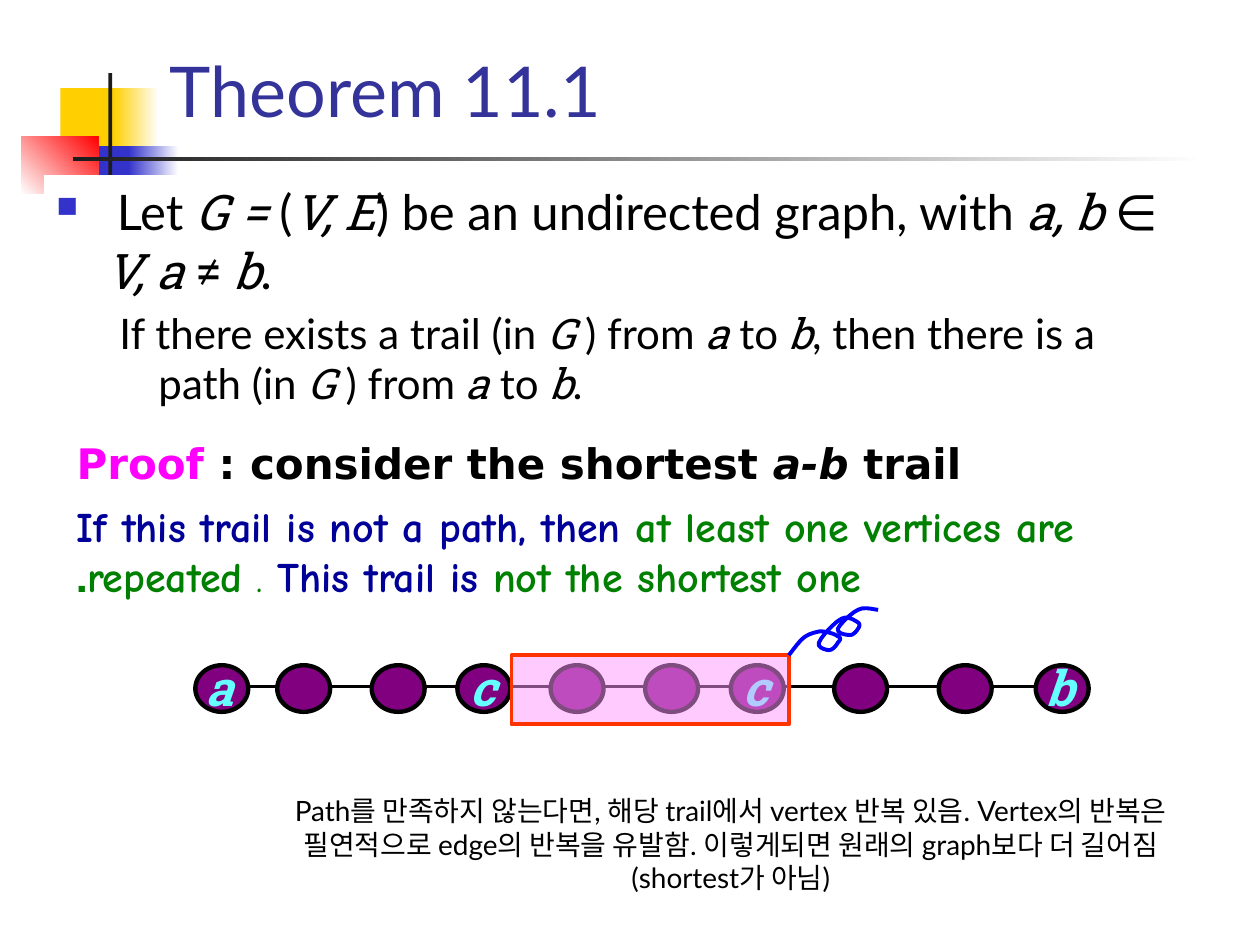
import pptx
import pptx.util
import pptx.dml.color
import pptx.enum.shapes
import pptx.enum.text
import pptx.oxml
import pptx.oxml.ns
import lxml.etree

Inches, Pt = pptx.util.Inches, pptx.util.Pt
RGBColor = pptx.dml.color.RGBColor
SHAPE = pptx.enum.shapes.MSO_SHAPE
ALIGN = pptx.enum.text.PP_ALIGN
ANCHOR = pptx.enum.text.MSO_ANCHOR
qn = pptx.oxml.ns.qn

WHITE = RGBColor(0xFF, 0xFF, 0xFF)
BLACK = RGBColor(0, 0, 0)
YELLOW = RGBColor(0xFF, 0xCF, 0x01)
BLUE = RGBColor(0x33, 0x33, 0xCC)
RED = RGBColor(0xFF, 0, 0)
CHARCOAL = RGBColor(0x1C, 0x1C, 0x1C)
TITLE_BLUE = RGBColor(0x33, 0x33, 0x99)
MAGENTA = RGBColor(0xFF, 0, 0xFF)
NAVY = RGBColor(0, 0, 0x99)
GREEN = RGBColor(0, 0x80, 0)
PURPLE = RGBColor(0x80, 0, 0x80)
CYAN = RGBColor(0x66, 0xFF, 0xFF)
PINK = RGBColor(0xFF, 0x99, 0xFF)
ORANGE = RGBColor(0xFF, 0x33, 0)
LOOP_BLUE = RGBColor(0, 0, 0xFF)

deck = pptx.Presentation()
deck.slide_width, deck.slide_height = Inches(10), Inches(7.5)
slide = deck.slides.add_slide(deck.slide_layouts[6])
shapes = slide.shapes


def draw(kind, box, fill, outline=None, width=0):
    """Add a preset shape; a fill of (start, end, angle) is a gradient."""
    shape = shapes.add_shape(kind, *map(Inches, box))
    shape.shadow.inherit = False
    if isinstance(fill, tuple) and not isinstance(fill, RGBColor):
        shape.fill.gradient()
        shape.fill.gradient_angle = fill[2]
        for stop, color in zip(shape.fill.gradient_stops, fill):
            stop.color.rgb = color
    else:
        shape.fill.solid()
        shape.fill.fore_color.rgb = fill
    if outline is None:
        shape.line.fill.background()
    else:
        shape.line.color.rgb = outline
        shape.line.width = Pt(width)
    return shape


def write(box, paragraphs, anchor=ANCHOR.TOP, wrap=True):
    """Add a text box from (paragraph formats, indents, runs) entries."""
    frame = shapes.add_textbox(*map(Inches, box)).text_frame
    frame.word_wrap, frame.vertical_anchor = wrap, anchor
    for index, (formats, properties, runs) in enumerate(paragraphs):
        paragraph = frame.add_paragraph() if index else frame.paragraphs[0]
        for name, value in formats.items():
            setattr(paragraph, name, value)
        for name, value in properties.items():
            paragraph._p.get_or_add_pPr().set(name, str(value))
        for text, font in runs:
            run = paragraph.add_run()
            run.text = text
            for name, value in font.items():
                if name == "color":
                    run.font.color.rgb = value
                else:
                    setattr(run.font, name, value)
    return frame


# Corner ornament and title rule
for box, fill in [
    ((0.48, 0.7, 0.48, 0.52), YELLOW),
    ((0.9, 0.7, 0.36, 0.52), (YELLOW, WHITE, 0)),
    ((0.62, 1.16, 0.46, 0.52), BLUE),
    ((1.02, 1.16, 0.4, 0.52), (BLUE, WHITE, 0)),
    ((0.17, 1.08, 0.61, 0.46), (WHITE, RED, 45)),
    ((0.86, 0.58, 0.03, 1.15), CHARCOAL),
    ((0.58, 1.25, 9, 0.03), (CHARCOAL, WHITE, 0)),
]:
    draw(SHAPE.RECTANGLE, box, fill)

# Title
title_font = {"name": "Lato", "size": Pt(40), "color": TITLE_BLUE}
write((1.25, 0.17, 8.52, 0.92), [({}, {}, [("Theorem 11.1", title_font)])],
      anchor=ANCHOR.BOTTOM)

# Statement of the theorem
plain = {"name": "Lato", "size": Pt(28), "color": BLACK}
symbol = plain | {"name": "Roboto Slab"}
variable = symbol | {"italic": True}
plain_sub, variable_sub = (font | {"size": Pt(24)} for font in (plain, variable))
first_indent = {"marL": Inches(0.38), "indent": Inches(-0.38)}
second_indent = {"marL": Inches(0.81), "indent": Inches(-0.31)}
statement = write((0.35, 1.39, 9.06, 2.47), [
    ({}, first_indent, [
        (" Let ", plain), ("G = ", variable), ("(", plain), ("V, E", variable),
        (") be an undirected graph, with ", plain), ("a, b ", variable),
        ("∈ ", symbol), ("V, a ", variable), ("≠", symbol), (" b", variable),
        (".", plain)]),
    ({"space_before": Pt(4.8)}, second_indent, [
        ("If there exists a trail (in ", plain_sub), ("G ", variable_sub),
        (") from ", plain_sub), ("a", variable_sub), (" to", plain_sub),
        (" b", variable_sub), (", then there is a path (in ", plain_sub),
        ("G", variable_sub), (" ) from ", plain_sub), ("a", variable_sub),
        (" to", plain_sub), (" b", variable_sub), (".", plain_sub)]),
])
statement_box = shapes[-1]
statement_box.fill.solid()
statement_box.fill.fore_color.rgb = WHITE
bullet_properties = statement.paragraphs[0]._p.get_or_add_pPr()
bullet_color = lxml.etree.SubElement(bullet_properties, qn("a:buClr"))
lxml.etree.SubElement(bullet_color, qn("a:srgbClr"), val=str(BLUE))
lxml.etree.SubElement(bullet_properties, qn("a:buSzPct"), val="60000")
lxml.etree.SubElement(bullet_properties, qn("a:buChar"), char="■")

# Proof, set right to left and aligned left
proof = {"name": "DejaVu Sans", "size": Pt(24), "bold": True, "color": BLACK}
navy = proof | {"name": "Comic Neue", "color": NAVY}
green = navy | {"color": GREEN}
left = {"alignment": ALIGN.LEFT}
write((0.51, 3.42, 9.06, 1.96), [
    (left | {"space_after": Pt(2.4)}, first_indent | {"rtl": 1}, [
        ("Proof ", proof | {"color": MAGENTA}),
        (": consider the shortest ", proof),
        ("a-b", proof | {"italic": True}), (" trail", proof)]),
    (left | {"space_before": Pt(4.8)}, second_indent | {"rtl": 1}, [
        ("If this trail is not a path, then ", navy),
        ("at least one vertices are repeated", green),
        (" . ", green | {"bold": False}), ("This trail is ", navy),
        ("not the shortest one.", green)]),
])

# Trail: edge line, then vertices with their labels
edge = shapes.add_connector(pptx.enum.shapes.MSO_CONNECTOR.STRAIGHT,
                            Inches(8.53), Inches(5.45), Inches(1.95), Inches(5.45))
edge.line.color.rgb = BLACK
edge.line.width = Pt(2)
lxml.etree.SubElement(edge._element.spPr, qn("a:effectLst"))

label_font = {"name": "Roboto Slab", "size": Pt(28), "bold": True,
              "italic": True, "color": CYAN}
centered = {"alignment": ALIGN.CENTER}
for x, label in [(1.55, "a"), (2.2, ""), (2.95, ""), (3.63, "c"), (4.37, ""),
                 (5.12, ""), (5.8, "c"), (6.62, ""), (7.45, ""), (8.22, "b")]:
    draw(SHAPE.OVAL, (x, 5.28, 0.42, 0.37), PURPLE, BLACK, 2.5)
    if label:
        write((x, 5.2, 0.4, 0.5), [(centered, {"rtl": 1}, [(label, label_font)])],
              anchor=ANCHOR.MIDDLE, wrap=False)

# Translucent cover over the repeated part
cover = draw(SHAPE.RECTANGLE, (4.06, 5.2, 2.2, 0.55), PINK, ORANGE, 2.25)
cover_color = cover._element.spPr.find(qn("a:solidFill"))[0]
lxml.etree.SubElement(cover_color, qn("a:alpha"), val="50000")

# Curl leaving the cover: cubic curves sampled into short steps
curl_start = (6.26, 5.2)
curl_curves = [
    ((6.28, 5.18), (6.34, 5.09), (6.38, 5.06)),
    ((6.42, 5.03), (6.46, 5.02), (6.51, 5.01)),
    ((6.55, 5.01), (6.63, 5.03), (6.65, 5.05)),
    ((6.68, 5.06), (6.67, 5.08), (6.65, 5.1)),
    ((6.64, 5.12), (6.61, 5.16), (6.58, 5.16)),
    ((6.56, 5.16), (6.48, 5.14), (6.5, 5.1)),
    ((6.51, 5.06), (6.63, 4.93), (6.68, 4.91)),
    ((6.73, 4.88), (6.79, 4.93), (6.81, 4.94)),
    ((6.83, 4.95), (6.82, 4.98), (6.81, 4.99)),
    ((6.8, 5.01), (6.77, 5.04), (6.75, 5.04)),
    ((6.72, 5.04), (6.64, 5.03), (6.65, 4.99)),
    ((6.66, 4.96), (6.76, 4.86), (6.81, 4.84)),
    ((6.86, 4.81), (6.94, 4.84), (6.97, 4.84)),
]
curl_points, here = [], curl_start
for bend_out, bend_in, end in curl_curves:
    for t in (0.2, 0.4, 0.6, 0.8, 1):
        u = 1 - t
        weights = (u ** 3, 3 * u * u * t, 3 * u * t * t, t ** 3)
        curl_points.append(tuple(
            Inches(sum(w * v for w, v in zip(weights, values)))
            for values in zip(here, bend_out, bend_in, end)))
    here = end
builder = shapes.build_freeform(*map(Inches, curl_start))
builder.add_line_segments(curl_points, close=False)
curl = builder.convert_to_shape()
curl.shadow.inherit = False
curl.fill.background()
curl.line.color.rgb = LOOP_BLUE
curl.line.width = Pt(2.25)

# Remark
remark = ("Path를 만족하지 않는다면, 해당 trail에서 vertex 반복 있음. "
          "Vertex의 반복은 필연적으로 edge의 반복을 유발함. "
          "이렇게되면 원래의 graph보다 더 길어짐(shortest가 아님)")
write((2.22, 6.25, 7.16, 0.91),
      [(centered, {"rtl": 1}, [(remark, plain | {"size": Pt(16)})])])

deck.save("out.pptx")
